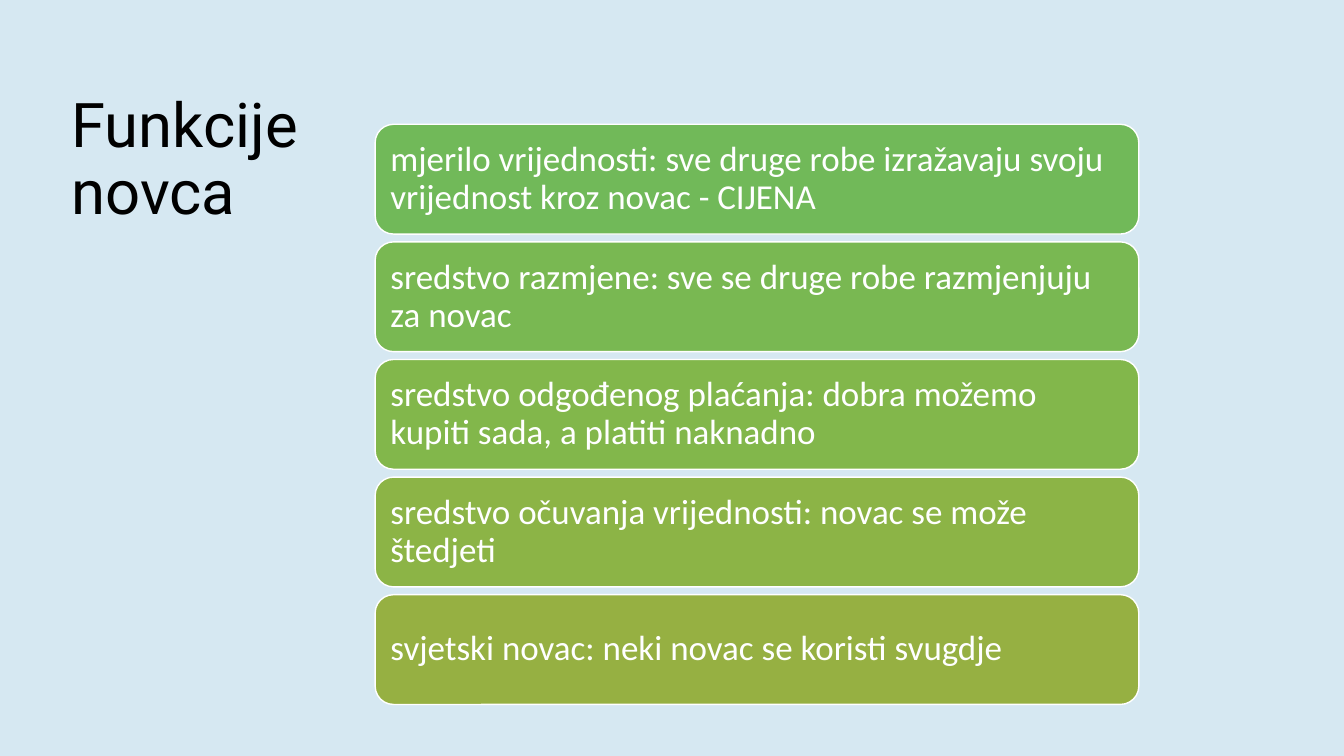
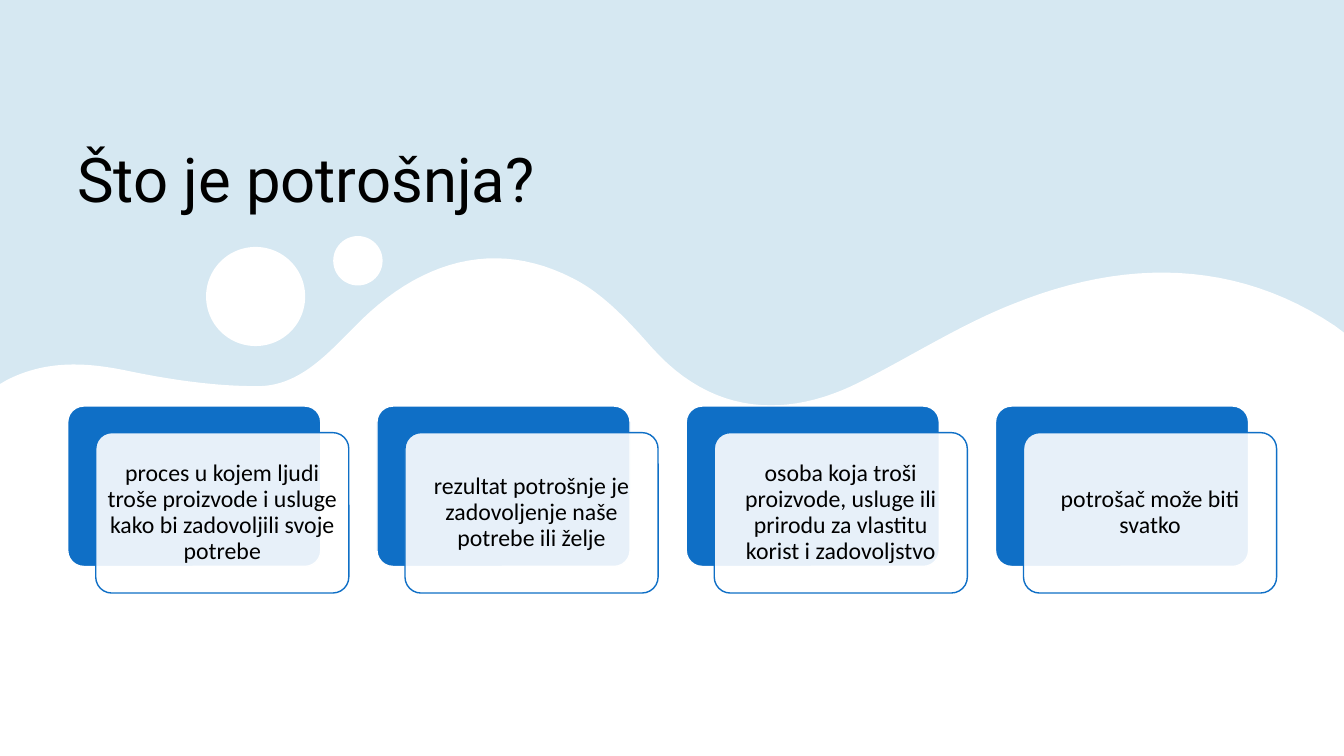
from lxml.etree import SubElement
from pptx import Presentation
from pptx.dml.color import RGBColor
from pptx.enum.shapes import MSO_SHAPE as Shape
from pptx.enum.text import MSO_ANCHOR as Anchor, PP_ALIGN as Align
from pptx.oxml.ns import qn
from pptx.util import Pt

COLORS = {
    "sky": "D6E8F2",
    "white": "FFFFFF",
    "black": "000000",
    "blue": "0F6FC6",
}
WIDTH, HEIGHT = 960, 540
TITLE_FONT, BODY_FONT = "Roboto", "Calibri"

FUNCTIONS_TITLE = "Funkcije novca"
FUNCTIONS = [
    ("mjerilo vrijednosti: sve druge robe izražavaju svoju vrijednost kroz novac - CIJENA", "71B959"),
    ("sredstvo razmjene: sve se druge robe razmjenjuju za novac", "79B852"),
    ("sredstvo odgođenog plaćanja: dobra možemo kupiti sada, a platiti naknadno", "82B74B"),
    ("sredstvo očuvanja vrijednosti: novac se može štedjeti", "8CB446"),
    ("svjetski novac: neki novac se koristi svugdje", "96B042"),
]
SPENDING_TITLE = "Što je potrošnja?"
SPENDING = [
    "proces u kojem ljudi troše proizvode i usluge kako bi zadovoljili svoje potrebe",
    "rezultat potrošnje je zadovoljenje naše potrebe ili želje",
    "osoba koja troši proizvode, usluge ili prirodu za vlastitu korist i zadovoljstvo",
    "potrošač može biti svatko",
]
BUBBLES = [(147.2, 176.4, 70.8), (238, 168.6, 35.3)]
WAVE_START = (5, 271.4)
WAVE_CURVES = [
    ((31.7, 257.8), (59, 258.5), (87.8, 264.2)),
    ((118.8, 270.7), (151.2, 275.8), (182.9, 275.8)),
    ((212.4, 276.5), (232.6, 254.2), (252, 234.7)),
    ((299.5, 185), (354.2, 170.6), (409, 198.7)),
    ((430.6, 209.5), (448.6, 229), (465.1, 247.7)),
    ((509, 297.4), (563, 298.8), (614.2, 272.9)),
    ((650.2, 254.9), (684.7, 232.6), (722.9, 217.4)),
    ((804.2, 184.3), (883.4, 185.8), (953.3, 232.6)),
]
CURVE_STEPS = 24


def rgb(color):
    return RGBColor.from_string(COLORS.get(color, color))


def write(shape, text, font=BODY_FONT, size=17, color="black", align=Align.LEFT,
          anchor=Anchor.MIDDLE, inset=(7.2, 7.2)):
    frame = shape.text_frame
    frame.word_wrap = True
    frame.vertical_anchor = anchor
    frame.margin_left = frame.margin_right = Pt(inset[0])
    frame.margin_top = frame.margin_bottom = Pt(inset[1])
    para = frame.paragraphs[0]
    para.alignment = align
    para.line_spacing = 0.9
    span = para.add_run()
    span.text = text
    span.font.name = font
    span.font.size = Pt(size)
    span.font.color.rgb = rgb(color)


def paint(shape, fill, line=None, opacity=100):
    shape.shadow.inherit = False
    shape.fill.solid()
    shape.fill.fore_color.rgb = rgb(fill)
    if opacity < 100:
        tint = shape.fill._xPr.find(qn("a:solidFill"))[0]
        SubElement(tint, qn("a:alpha"), val=str(opacity * 1000))
    if line:
        shape.line.color.rgb = rgb(line)
        shape.line.width = Pt(1)
    else:
        shape.line.fill.background()


def add_card(page, left, top, width, height, fill, line, rounding, opacity=100):
    card = page.shapes.add_shape(Shape.ROUNDED_RECTANGLE, Pt(left), Pt(top), Pt(width), Pt(height))
    card.adjustments[0] = rounding
    paint(card, fill, line, opacity)
    return card


def add_page(deck):
    page = deck.slides.add_slide(deck.slide_layouts[6])
    page.background.fill.solid()
    page.background.fill.fore_color.rgb = rgb("sky")
    return page


def add_title(page, text, left, top, width, height, anchor):
    box = page.shapes.add_textbox(Pt(left), Pt(top), Pt(width), Pt(height))
    write(box, text, font=TITLE_FONT, size=44, anchor=anchor, inset=(7.2, 3.6))


def wave_points():
    points = [WAVE_START]
    for first, second, end in WAVE_CURVES:
        start = points[-1]
        for step in range(1, CURVE_STEPS + 1):
            t = step / CURVE_STEPS
            u = 1 - t
            points.append(tuple(
                u ** 3 * a + 3 * u * u * t * b + 3 * u * t * t * c + t ** 3 * d
                for a, b, c, d in zip(start, first, second, end)))
    return points + [(WIDTH, 237.6), (WIDTH, HEIGHT), (0, HEIGHT)]


def add_wave(page):
    builder = page.shapes.build_freeform(0, Pt(274.3), scale=1.0)
    builder.add_line_segments([(Pt(x), Pt(y)) for x, y in wave_points()], close=True)
    paint(builder.convert_to_shape(), "white")
    for left, top, size in BUBBLES:
        bubble = page.shapes.add_shape(Shape.OVAL, Pt(left), Pt(top), Pt(size), Pt(size))
        paint(bubble, "white")


def build_functions(deck):
    page = add_page(deck)
    add_title(page, FUNCTIONS_TITLE, 44, 64, 291.6, 426, Anchor.TOP)
    height, gap = 78.4, 5.6
    for index, (text, fill) in enumerate(FUNCTIONS):
        top = 88.8 + index * (height + gap)
        card = add_card(page, 268, top, 545.5, height, fill, "white", 0.1667)
        write(card, text, size=25, color="white")


def build_spending(deck):
    page = add_page(deck)
    add_wave(page)
    add_title(page, SPENDING_TITLE, 48, 44, 864, 113.8, Anchor.BOTTOM)
    width, height, pitch = 180.8, 114.6, 220.9
    for index, text in enumerate(SPENDING):
        left, top = 48.4 + index * pitch, 290
        add_card(page, left, top, width, height, "blue", "white", 0.1)
        card = add_card(page, left + 20, top + 19, width, height, "white", "blue", 0.1, opacity=90)
        write(card, text, align=Align.CENTER, inset=(5, 5))


def main():
    deck = Presentation()
    deck.slide_width, deck.slide_height = Pt(WIDTH), Pt(HEIGHT)
    build_functions(deck)
    build_spending(deck)
    deck.save("out.pptx")


if __name__ == "__main__":
    main()
